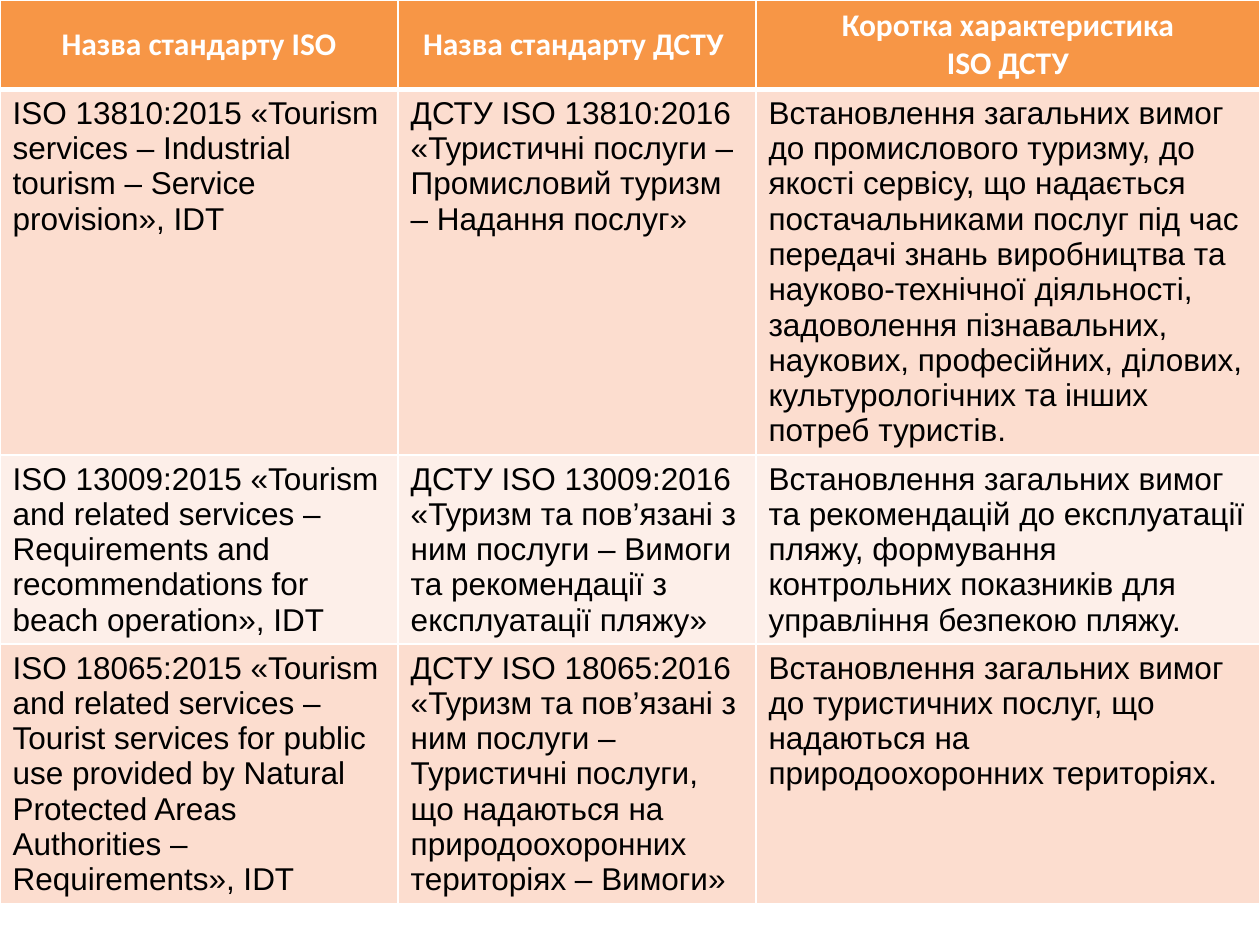
import pptx
import pptx.dml.color
import pptx.enum.text
import pptx.oxml
import pptx.oxml.ns
import pptx.util
from pptx.util import Cm

HEADERS = ["Назва стандарту ISO", "Назва стандарту ДСТУ ", "Коротка характеристика\nISO ДСТУ"]
STANDARDS = [
    ["ISO 13810:2015 «Tourism services – Industrial tourism – Service provision», IDT",
     "ДСТУ ISO 13810:2016 «Туристичні послуги – Промисловий туризм – Надання послуг»",
     "Встановлення загальних вимог до промислового туризму, до якості сервісу, що надається "
     "постачальниками послуг під час передачі знань виробництва та науково-технічної діяльності, "
     "задоволення пізнавальних, наукових, професійних, ділових, культурологічних та інших "
     "потреб туристів."],
    ["ISO 13009:2015 «Tourism and related services – Requirements and recommendations for "
     "beach operation», IDT",
     "ДСТУ ISO 13009:2016 «Туризм та пов’язані з ним послуги – Вимоги та рекомендації з "
     "експлуатації пляжу»",
     "Встановлення загальних вимог та рекомендацій до експлуатації пляжу, формування "
     "контрольних показників для управління безпекою пляжу."],
    ["ISO 18065:2015 «Tourism and related services – Tourist services for public use provided "
     "by Natural Protected Areas Authorities – Requirements», IDT",
     "ДСТУ ISO 18065:2016 «Туризм та пов’язані з ним послуги – Туристичні послуги, що надаються "
     "на природоохоронних територіях – Вимоги»",
     "Встановлення загальних вимог до туристичних послуг, що надаються на природоохоронних "
     "територіях."],
]
COL_SHARES = [0.316, 0.284, 0.4]
ROW_HEIGHTS = [1.79, 7.37, 3.81, 5.22]
BAND_FILLS = ["FCDDCF", "FDEFE9"]


def rgb(value):
    """Return the colour for a hex string."""
    return pptx.dml.color.RGBColor.from_string(value)


def set_borders(cell, bottom):
    """Draw white cell borders, 1 pt except for the given bottom width."""
    tcPr = cell._tc.get_or_add_tcPr()
    widths = {"lnL": 1, "lnR": 1, "lnT": 1, "lnB": bottom}
    for i, (tag, width) in enumerate(widths.items()):
        tcPr.insert(i, pptx.oxml.parse_xml(
            f'<a:{tag} {pptx.oxml.ns.nsdecls("a")} w="{pptx.util.Pt(width)}">'
            f'<a:solidFill><a:srgbClr val="FFFFFF"/></a:solidFill></a:{tag}>'))


def fill_cell(cell, text, fill, is_header):
    """Write and format one cell as a header or as body text."""
    cell.fill.solid()
    cell.fill.fore_color.rgb = rgb(fill)
    set_borders(cell, 3 if is_header else 1)
    anchors = pptx.enum.text.MSO_ANCHOR
    aligns = pptx.enum.text.PP_ALIGN
    cell.vertical_anchor = anchors.MIDDLE if is_header else anchors.TOP
    cell.text_frame.text = text
    for p in cell.text_frame.paragraphs:
        p.alignment = aligns.CENTER if is_header else aligns.LEFT
        for r in p.runs:
            r.font.name = "Calibri" if is_header else "Arial"
            r.font.size = pptx.util.Pt(18)
            r.font.bold = is_header
            r.font.color.rgb = rgb("FFFFFF" if is_header else "000000")


def add_standards_table(s, left, top, width):
    """Place the table of standards in the given width."""
    rows = [HEADERS] + STANDARDS
    height = Cm(sum(ROW_HEIGHTS))
    table = s.shapes.add_table(len(rows), len(HEADERS), left, top, width, height).table
    for col, share in zip(table.columns, COL_SHARES):
        col.width = int(width * share)
    for i, (texts, row_height) in enumerate(zip(rows, ROW_HEIGHTS)):
        table.rows[i].height = Cm(row_height)
        fill = BAND_FILLS[(i - 1) % 2] if i else "F79646"
        for j, text in enumerate(texts):
            fill_cell(table.cell(i, j), text, fill, i == 0)


def main():
    """Build and save the slide."""
    prs = pptx.Presentation()
    prs.slide_width, prs.slide_height = Cm(25.4), Cm(19.05)
    s = prs.slides.add_slide(prs.slide_layouts[6])
    add_standards_table(s, Cm(0), Cm(0), prs.slide_width)
    prs.save("out.pptx")


if __name__ == "__main__":
    main()
